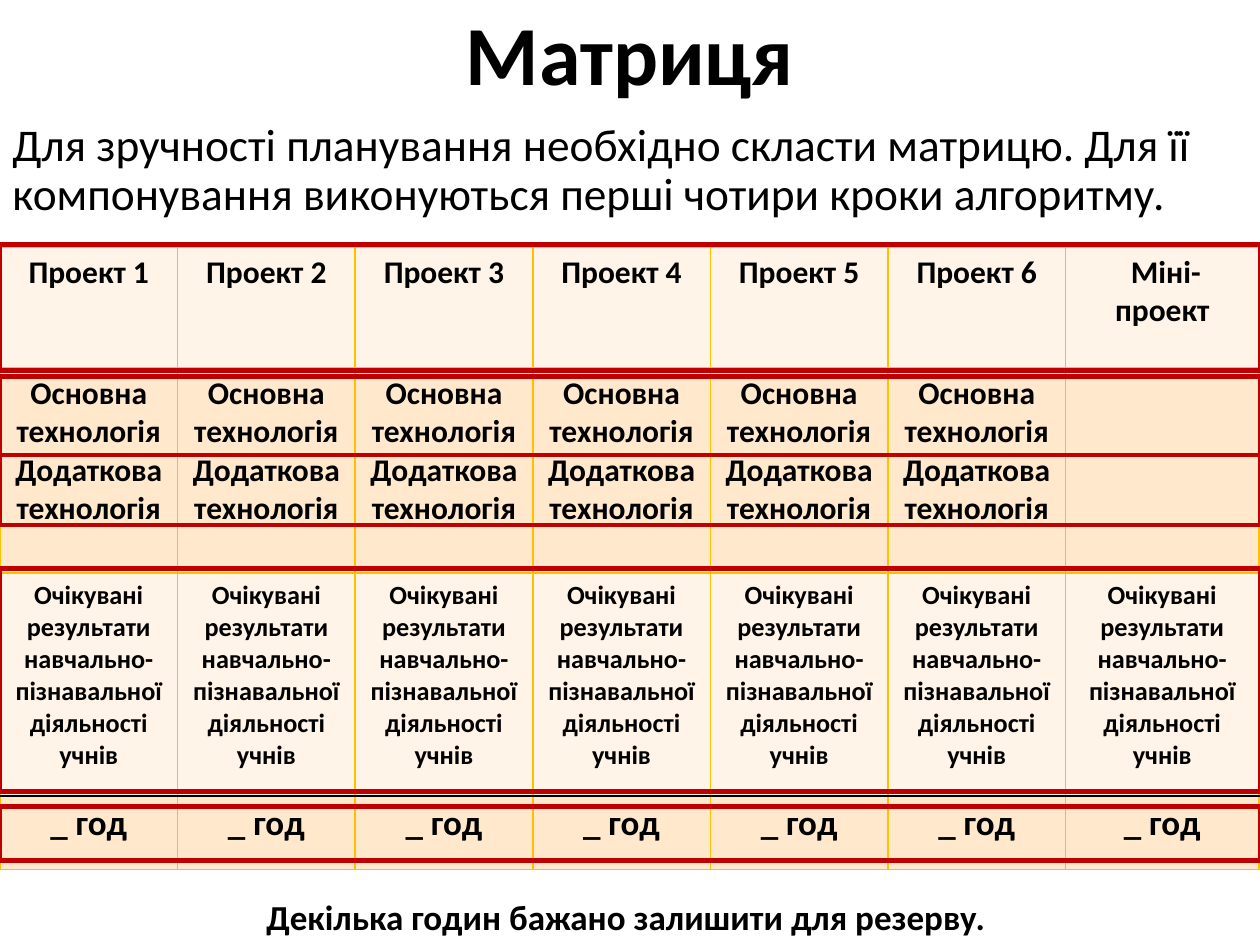
from pptx import Presentation
from pptx.dml.color import RGBColor
from pptx.enum.shapes import MSO_SHAPE as Shape
from pptx.enum.text import MSO_ANCHOR as Anchor, PP_ALIGN as Align
from pptx.oxml import parse_xml
from pptx.oxml.ns import nsdecls
from pptx.util import Cm, Pt

BLACK = RGBColor(0x00, 0x00, 0x00)
RED = RGBColor(0xC0, 0x00, 0x00)
GOLD = RGBColor(0xFF, 0xC0, 0x00)
PALE = RGBColor(0xFF, 0xF4, 0xE7)
PEACH = RGBColor(0xFF, 0xE8, 0xCC)


def write(frame, *lines, size=18, bold=True, align=Align.CENTER, gap=None):
    """Fill a text frame, one paragraph per line."""
    for i, line in enumerate(lines):
        para = frame.paragraphs[0] if i == 0 else frame.add_paragraph()
        para.alignment = align
        para.line_spacing = gap
        run = para.add_run()
        run.text = line
        font = run.font
        font.name, font.size, font.bold = "Calibri", Pt(size), bold
        font.color.rgb = BLACK


class Page:
    def __init__(self, slide):
        self.slide = slide
        self.width = 25.4

    def text(self, x, y, w, h, line, anchor=Anchor.TOP, **form):
        frame = self.slide.shapes.add_textbox(Cm(x), Cm(y), Cm(w), Cm(h)).text_frame
        frame.word_wrap = True
        frame.vertical_anchor = anchor
        write(frame, line, **form)

    def box(self, y, h):
        """Red outline across the full slide width."""
        shape = self.slide.shapes.add_shape(
            Shape.RECTANGLE, 0, Cm(y), Cm(self.width), Cm(h))
        shape.shadow.inherit = False
        shape.fill.background()
        shape.line.color.rgb = RED
        shape.line.width = Pt(2.5)

    def edge(self, cell, side, color):
        cell._tc.get_or_add_tcPr().append(parse_xml(
            f'<a:ln{side} {nsdecls("a")} w="{Pt(1)}"><a:solidFill>'
            f'<a:srgbClr val="{color}"/></a:solidFill></a:ln{side}>'))

    def table(self, y, cols, rows):
        high = [row["high"] for row in rows]
        grid = self.slide.shapes.add_table(
            len(rows), len(cols), 0, Cm(y), Cm(sum(cols)), Cm(sum(high))).table
        for col, wide in zip(grid.columns, cols):
            col.width = Cm(wide)
        for r, row in enumerate(rows):
            grid.rows[r].height = Cm(row["high"])
            for c, lines in enumerate(row["cells"]):
                cell = grid.cell(r, c)
                for side in "LRTB":
                    self.edge(cell, side, row.get(side, GOLD))
                cell.fill.solid()
                cell.fill.fore_color.rgb = PEACH if r % 2 else PALE
                write(cell.text_frame, *lines, size=row["size"])


def main():
    deck = Presentation()
    deck.slide_width, deck.slide_height = Cm(25.4), Cm(19.05)
    page = Page(deck.slides.add_slide(deck.slide_layouts[6]))

    # Project matrix
    goal = "Очікувані результати навчально-пізнавальної діяльності учнів"
    tech = ("Основна технологія", "Додаткова технологія")
    heads = [(f"Проект {n}",) for n in range(1, 7)] + [(" Міні-проект",)]
    page.table(4.98, [3.58] * 6 + [3.9], [
        dict(high=2.44, size=18, cells=heads),
        dict(high=4.13, size=18, cells=[tech] * 6 + [()]),
        dict(high=4.5, size=15, cells=[(goal,)] * 7, B=BLACK),
        dict(high=1.48, size=20, cells=[("_ год",)] * 7, T=BLACK),
    ])

    # Title, lead and closing note
    page.text(1.75, 0, 21.9, 2.34, "Матриця", Anchor.MIDDLE, size=48, gap=0.9)
    page.text(0, 2.34, page.width, 2.82,
              "Для зручності планування необхідно скласти матрицю. "
              "Для її компонування виконуються перші чотири кроки алгоритму.",
              size=25.9, bold=False, align=Align.LEFT, gap=0.9)
    page.text(0, 17.93, page.width, 1.12,
              "Декілька годин бажано залишити для резерву. ", size=20)

    # Red frames around the matrix steps
    for y, h in ((4.93, 2.54), (7.59, 1.58), (9.17, 1.42),
                 (11.46, 4.5), (16.26, 1.09)):
        page.box(y, h)

    deck.save("out.pptx")


if __name__ == "__main__":
    main()
